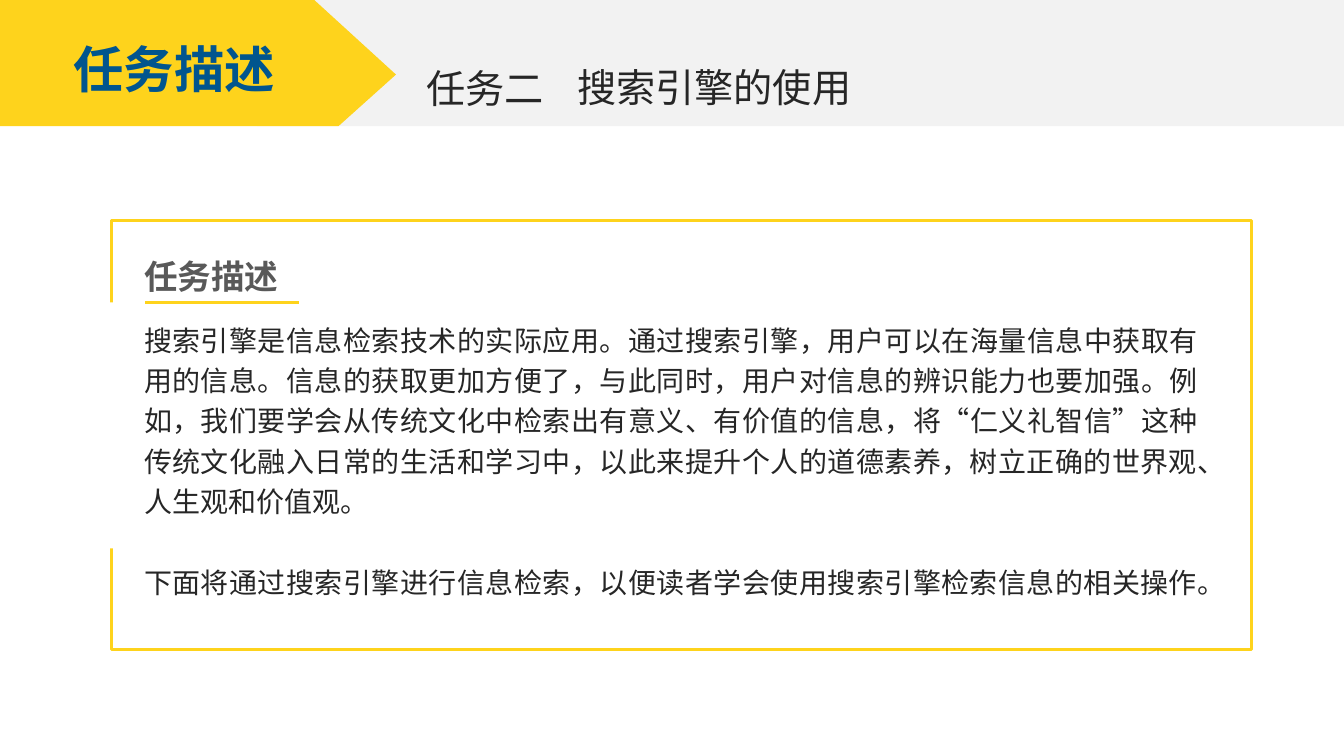
from lxml.etree import SubElement
from pptx import Presentation
from pptx.dml.color import RGBColor
from pptx.enum.shapes import MSO_CONNECTOR, MSO_SHAPE
from pptx.enum.text import PP_ALIGN
from pptx.oxml.ns import qn
from pptx.util import Cm, Pt

YELLOW, BLUE, WHITE = "FED31C", "01558E", "FFFFFF"
PALE_GREY, MID_GREY, DARK_GREY = "F2F2F2", "595959", "262626"
SLIDE_WIDTH, SLIDE_HEIGHT = 33.87, 19.05
BODY_TEXTS = [
    "搜索引擎是信息检索技术的实际应用。通过搜索引擎，用户可以在海量信息中获取有用的信息。"
    "信息的获取更加方便了，与此同时，用户对信息的辨识能力也要加强。例如，我们要学会从传统文化中"
    "检索出有意义、有价值的信息，将“仁义礼智信”这种传统文化融入日常的生活和学习中，"
    "以此来提升个人的道德素养，树立正确的世界观、人生观和价值观。",
    "下面将通过搜索引擎进行信息检索，以便读者学会使用搜索引擎检索信息的相关操作。",
]


def color(hex_string):
    """Turn a hex string into a colour."""
    return RGBColor.from_string(hex_string)


def paint(shape, fill, line=None):
    """Give a shape a flat fill and an optional outline."""
    shape.shadow.inherit = False
    shape.fill.solid()
    shape.fill.fore_color.rgb = color(fill)
    if line:
        shape.line.color.rgb = color(line)
        shape.line.width = Pt(2)
    else:
        shape.line.fill.background()


def add_rectangle(slide, left, top, width, height, fill, line=None):
    """Add a rectangle measured in centimetres."""
    shape = slide.shapes.add_shape(
        MSO_SHAPE.RECTANGLE, Cm(left), Cm(top), Cm(width), Cm(height))
    paint(shape, fill, line)


def add_text(slide, left, top, width, height, texts, size, hex_string, bold=False,
             align=PP_ALIGN.LEFT, spacing=1.0, gap=0, font="Arial", wrap=True):
    """Add a text box with one paragraph for each text."""
    box = slide.shapes.add_textbox(Cm(left), Cm(top), Cm(width), Cm(height))
    frame = box.text_frame
    frame.word_wrap = wrap
    for index, text in enumerate(texts):
        paragraph = frame.add_paragraph() if index else frame.paragraphs[0]
        paragraph.alignment = align
        paragraph.line_spacing = spacing
        paragraph.space_before = Pt(gap if index else 0)
        run = paragraph.add_run()
        run.text = text
        run.font.name = font
        run.font.size = Pt(size)
        run.font.bold = bold
        run.font.color.rgb = color(hex_string)
        if font != "Arial":
            SubElement(run.font._element, qn("a:ea"), typeface=font)


def add_header(slide, left, top, width, height):
    """Draw the grey band, the yellow arrow and the titles."""
    add_rectangle(slide, left + 6.48, top, width - 6.48, height, PALE_GREY)
    builder = slide.shapes.build_freeform(Cm(left), Cm(top))
    corners = [(7.92, 0), (9.98, 1.88), (8.53, height), (0, height)]
    builder.add_line_segments([(Cm(left + x), Cm(top + y)) for x, y in corners])
    paint(builder.convert_to_shape(), YELLOW)
    add_text(slide, left + 1.57, top + 0.84, 5.64, 1.8, ["任务描述"], 36, BLUE, bold=True,
             align=PP_ALIGN.CENTER, font="Noto Sans CJK SC", wrap=False)
    add_text(slide, left + 14.3, top + 1.47, 12.75, 1.45, ["搜索引擎的使用"], 28, DARK_GREY)
    add_text(slide, left + 10.49, top + 1.5, 3.78, 1.45, ["任务二"], 28, DARK_GREY)


def add_description(slide, left, top, width, height):
    """Draw the open frame with its heading and body text."""
    add_rectangle(slide, left, top, width, height, WHITE, YELLOW)
    add_rectangle(slide, left - 0.36, top + 2.06, 0.91, 6.2, WHITE)
    rule_top = Cm(top + 2.06)
    rule = slide.shapes.add_connector(
        MSO_CONNECTOR.STRAIGHT, Cm(left + 0.84), rule_top, Cm(left + 4.72), rule_top)
    rule.line.color.rgb = color(YELLOW)
    rule.line.width = Pt(2)
    SubElement(rule._element.spPr, qn("a:effectLst"))
    add_text(slide, left + 0.56, top + 2.29, 27.05, 7.44, BODY_TEXTS, 20, DARK_GREY,
             align=PP_ALIGN.JUSTIFY, spacing=1.2, gap=29)
    add_text(slide, left + 0.56, top + 0.56, 7.8, 1.37, ["任务描述"], 24, MID_GREY, bold=True,
             align=PP_ALIGN.JUSTIFY, spacing=1.2)


def main():
    """Build the slide and save it."""
    presentation = Presentation()
    presentation.slide_width = Cm(SLIDE_WIDTH)
    presentation.slide_height = Cm(SLIDE_HEIGHT)
    slide = presentation.slides.add_slide(presentation.slide_layouts[6])
    add_description(slide, 2.82, 5.56, 28.73, 10.8)
    add_header(slide, 0, 0, SLIDE_WIDTH, 3.18)
    presentation.save("out.pptx")


if __name__ == "__main__":
    main()
